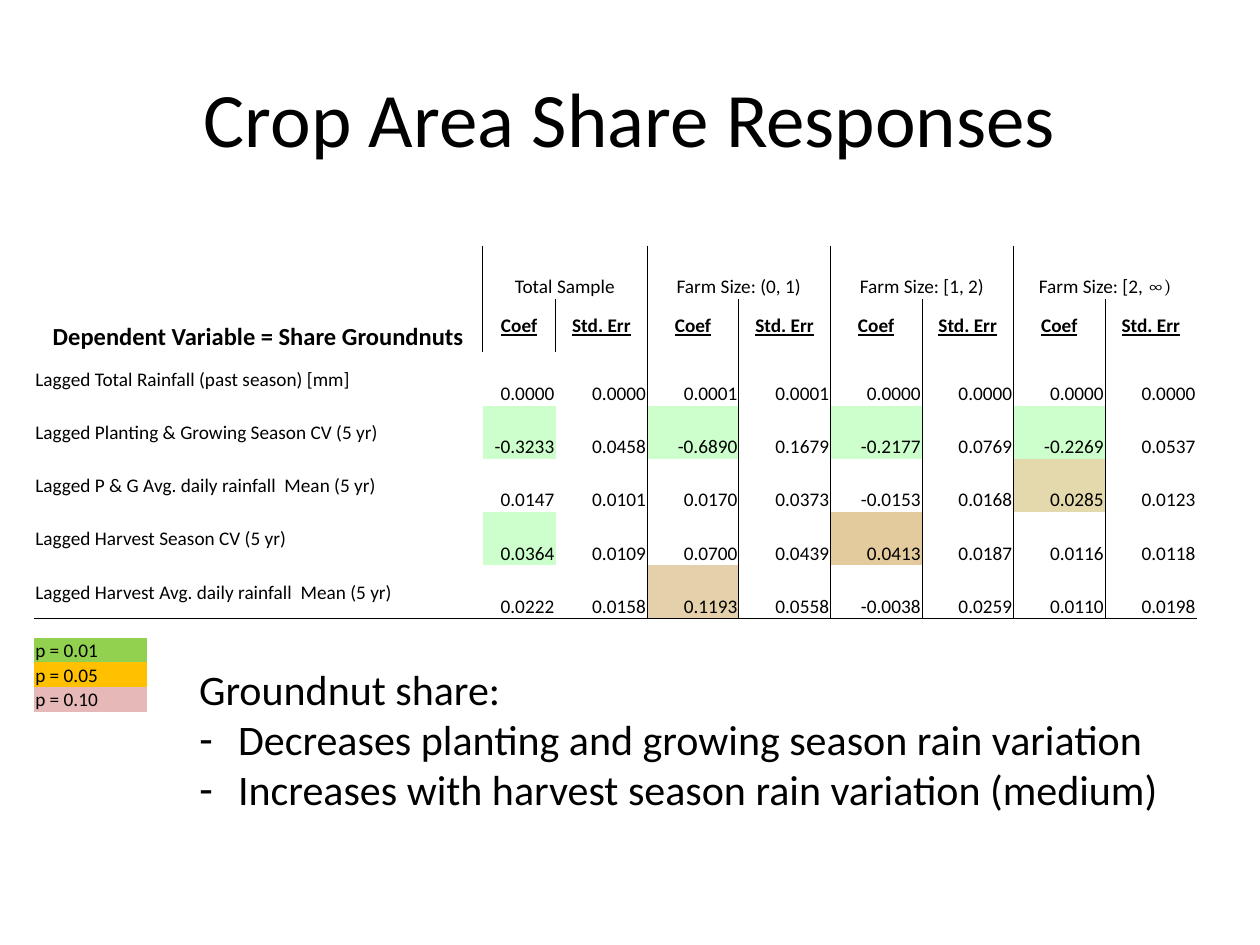
"""Build a slide on how crop area shares respond to rainfall."""
from dataclasses import dataclass

from lxml import etree
from pptx import Presentation
from pptx import util as u
from pptx.dml.color import RGBColor
from pptx.enum import text as t
from pptx.oxml import ns


@dataclass(frozen=True)
class Theme:
    font: str = "Calibri"
    math: str = "Cambria"
    ink: str = "000000"
    green: str = "CCFFCC"
    sand: str = "E4D9AD"
    tan: str = "E4CB9E"
    wheat: str = "E4D0AA"
    title: int = 44
    body: int = 24
    head: int = 14
    small: int = 11
    plain: str = "{2D5ABB26-0587-4C30-8999-92F81FD0307C}"


look = Theme()
TITLE = "Crop Area Share Responses"
HEAD = "Dependent Variable = Share Groundnuts"
GROUPS = [("Total Sample", ""), ("Farm Size: (0, 1)", ""),
          ("Farm Size: [1, 2)", ""), ("Farm Size: [2, ", "∞)")]
PAIR = ["Coef", "Std. Err"]
ROWS = [
    ("Lagged Total Rainfall (past season) [mm]",
     "0.0000 0.0000 0.0001 0.0001 0.0000 0.0000 0.0000 0.0000"),
    ("Lagged Planting & Growing Season CV (5 yr)",
     "-0.3233 0.0458 -0.6890 0.1679 -0.2177 0.0769 -0.2269 0.0537"),
    ("Lagged P & G Avg. daily rainfall  Mean (5 yr)",
     "0.0147 0.0101 0.0170 0.0373 -0.0153 0.0168 0.0285 0.0123"),
    ("Lagged Harvest Season CV (5 yr)",
     "0.0364 0.0109 0.0700 0.0439 0.0413 0.0187 0.0116 0.0118"),
    ("Lagged Harvest Avg. daily rainfall  Mean (5 yr)",
     "0.0222 0.0158 0.1193 0.0558 -0.0038 0.0259 0.0110 0.0198"),
]
TINTS = {(3, 1): look.green, (3, 3): look.green, (3, 5): look.green,
         (3, 7): look.green, (4, 7): look.sand, (5, 1): look.green,
         (5, 5): look.tan, (6, 3): look.wheat}
LEGEND = [("p = 0.01", "92D050"), ("p = 0.05", "FFC000"), ("p = 0.10", "E6B8B7")]
LEAD = "Groundnut share:"
POINTS = ["Decreases planting and growing season rain variation",
          "Increases with harvest season rain variation (medium)"]

deck = Presentation()
deck.slide_width, deck.slide_height = u.Inches(10), u.Inches(7.5)
slide = deck.slides.add_slide(deck.slide_layouts[1])


def wide(share):
    return int(deck.slide_width * share)


def high(share):
    return int(deck.slide_height * share)


def write(para, words, size=look.small, font=look.font, bold=False,
          line=False, align=t.PP_ALIGN.LEFT):
    para.alignment = align
    run = para.add_run()
    run.text = words
    face = run.font
    face.name, face.size, face.bold, face.underline = font, u.Pt(size), bold, line
    face.color.rgb = RGBColor.from_string(look.ink)


def place(shape, left, top, width, height):
    shape.left, shape.top = wide(left), high(top)
    shape.width, shape.height = wide(width), high(height)


def grid(left, top, cols, rows):
    frame = slide.shapes.add_table(len(rows), len(cols), wide(left), high(top),
                                   wide(sum(cols)), high(sum(rows)))
    table = frame.table
    table.first_row = table.horz_banding = False
    table._tbl.tblPr.find(ns.qn("a:tableStyleId")).text = look.plain
    for col, share in zip(table.columns, cols):
        col.width = wide(share)
    for row, share in zip(table.rows, rows):
        row.height = high(share)
    return table


def edge(cell, side, width):
    line = etree.SubElement(cell._tc.get_or_add_tcPr(), ns.qn("a:ln" + side),
                            w=str(u.Pt(width)))
    fill = etree.SubElement(line, ns.qn("a:solidFill"))
    etree.SubElement(fill, ns.qn("a:srgbClr"), val=look.ink)


def dress(cell, tint=None, anchor=t.MSO_ANCHOR.BOTTOM):
    cell.margin_left = cell.margin_right = cell.margin_top = u.Inches(0.01)
    cell.margin_bottom = 0
    cell.vertical_anchor = anchor
    if tint:
        cell.fill.solid()
        cell.fill.fore_color.rgb = RGBColor.from_string(tint)
    else:
        cell.fill.background()
    return cell.text_frame.paragraphs[0]


def results():
    mid, mean = t.PP_ALIGN.CENTER, t.MSO_ANCHOR.MIDDLE
    count = len(ROWS) + 2
    table = grid(0.027, 0.26, [0.356, 0.058] + [0.0727] * 7, [0.0564] * count)
    for r in range(count):
        for c in range(9):
            cell = table.cell(r, c)
            if c % 2 and (c > 1 or r < 2):
                edge(cell, "L", 0.5)
            if c % 2 == 0 and c < 8 and (c or r < 2):
                edge(cell, "R", 0.5)
            if r == count - 1:
                edge(cell, "B", 1)
    table.cell(0, 0).merge(table.cell(1, 0))
    write(dress(table.cell(0, 0)), HEAD, size=look.head, bold=True, align=mid)
    for g, (name, sign) in enumerate(GROUPS):
        c = 1 + 2 * g
        table.cell(0, c).merge(table.cell(0, c + 1))
        para = dress(table.cell(0, c))
        write(para, name, align=mid)
        if sign:
            write(para, sign, font=look.math, align=mid)
        for k, word in enumerate(PAIR):
            write(dress(table.cell(1, c + k), anchor=mean), word,
                  bold=True, line=True, align=mid)
    for r, (name, figures) in enumerate(ROWS, 2):
        write(dress(table.cell(r, 0), anchor=mean), name)
        for c, value in enumerate(figures.split(), 1):
            write(dress(table.cell(r, c), TINTS.get((r, c))), value,
                  align=t.PP_ALIGN.RIGHT)


def legend():
    table = grid(0.027, 0.675, [0.09], [0.026] * len(LEGEND))
    for r, (name, tint) in enumerate(LEGEND):
        write(dress(table.cell(r, 0), tint), name)


def points():
    body = slide.placeholders[1]
    place(body, 0.148, 0.695, 0.789, 0.175)
    frame = body.text_frame
    frame.word_wrap = False
    frame.auto_size = t.MSO_AUTO_SIZE.SHAPE_TO_FIT_TEXT
    hang = u.Inches(0.31)
    for i, words in enumerate([LEAD] + POINTS):
        para = frame.add_paragraph() if i else frame.paragraphs[0]
        para.space_before = u.Pt(0)
        props = para._p.get_or_add_pPr()
        props.set("marL", str(hang if i else 0))
        props.set("indent", str(-hang if i else 0))
        if i:
            etree.SubElement(props, ns.qn("a:buChar"), char="-")
        else:
            etree.SubElement(props, ns.qn("a:buNone"))
        write(para, words, size=look.body)


def main():
    title = slide.shapes.title
    place(title, 0.05, 0.04, 0.9, 0.167)
    write(title.text_frame.paragraphs[0], TITLE, size=look.title,
          align=t.PP_ALIGN.CENTER)
    results()
    legend()
    points()
    deck.save("out.pptx")


if __name__ == "__main__":
    main()
